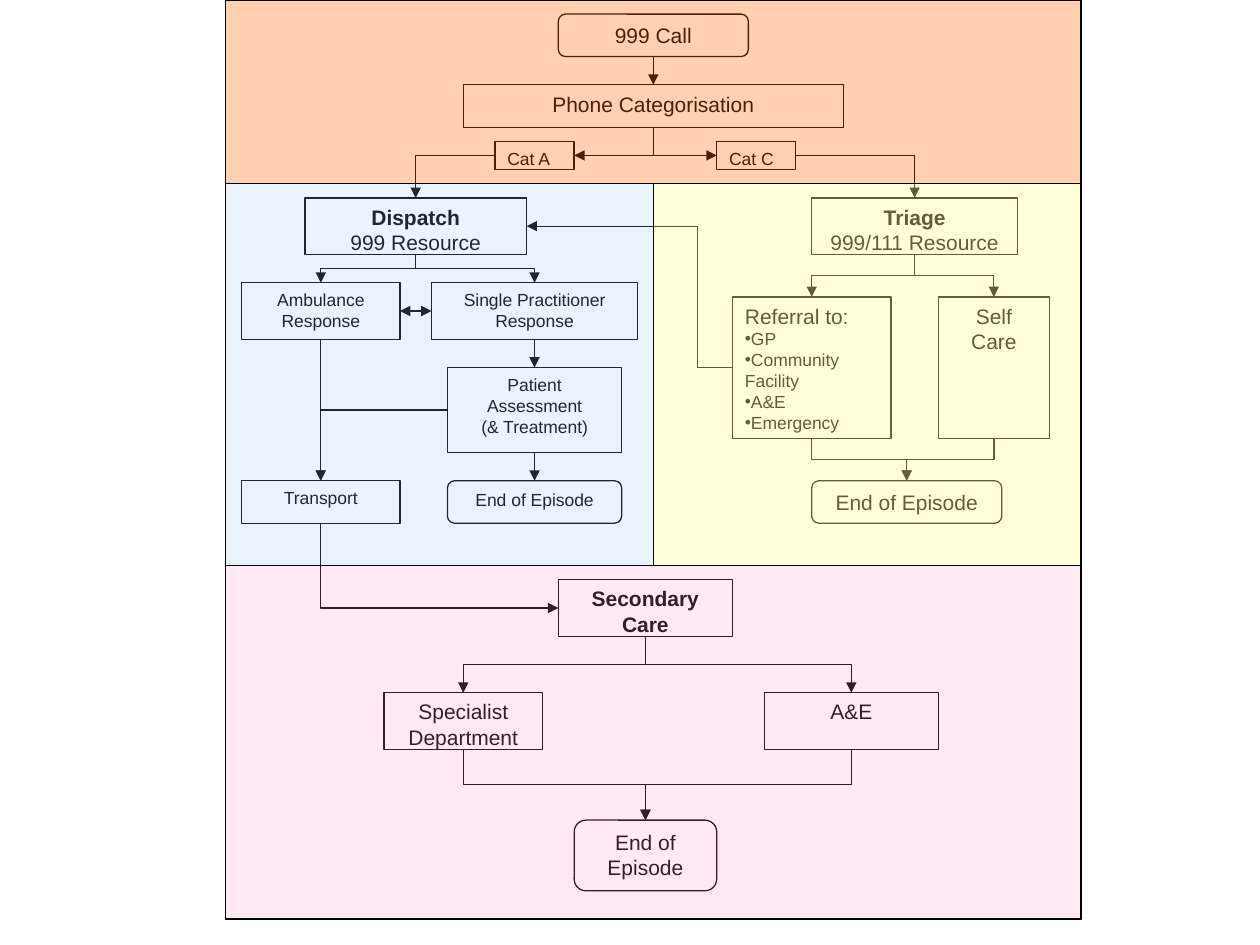
from lxml import etree
from pptx import Presentation
from pptx.dml.color import RGBColor
from pptx.enum.shapes import MSO_CONNECTOR, MSO_SHAPE
from pptx.enum.text import MSO_ANCHOR, PP_ALIGN
from pptx.oxml.ns import qn
from pptx.util import Pt

PROCESS = MSO_SHAPE.FLOWCHART_PROCESS
ALTERNATE = MSO_SHAPE.FLOWCHART_ALTERNATE_PROCESS
ROUNDED = MSO_SHAPE.ROUNDED_RECTANGLE
STRAIGHT, ELBOW = MSO_CONNECTOR.STRAIGHT, MSO_CONNECTOR.ELBOW
TOP = MSO_ANCHOR.TOP
CENTER, LEFT = PP_ALIGN.CENTER, PP_ALIGN.LEFT
TOP_SIDE, LEFT_SIDE, BOTTOM_SIDE, RIGHT_SIDE = range(4)
CHART_LEFT, COLUMN, ROW = 129, 9.05, 8.08
BLACK, WHITE = "000000", "FFFFFF"
INTAKE = (0, 0, 54, 13)
DISPATCH = (0, 13, 27, 27)
TRIAGE = (27, 13, 27, 27)
SECONDARY = (0, 40, 54, 25)


def color(value):
    """Turn a hex string into a colour."""
    return RGBColor.from_string(value)


def outline(line):
    """Give a line the thin black stroke of the chart."""
    line.color.rgb = color(BLACK)
    line.width = Pt(0.75)


def add_block(slide, region, cell, kind=PROCESS, fill=None):
    """Add an outlined shape at a grid cell of a region."""
    column, row, columns, rows = cell
    block = slide.shapes.add_shape(
        kind,
        Pt(CHART_LEFT + (region[0] + column) * COLUMN),
        Pt((region[1] + row) * ROW),
        Pt(columns * COLUMN),
        Pt(rows * ROW),
    )
    block.shadow.inherit = False
    outline(block.line)
    if fill:
        block.fill.solid()
        block.fill.fore_color.rgb = color(fill)
    else:
        block.fill.background()
    return block


def add_step(slide, region, cell, lines, size=12, bold=False, kind=PROCESS, align=CENTER):
    """Add a step whose lines are strings or (text, format) pairs."""
    step = add_block(slide, region, cell, kind, WHITE)
    frame = step.text_frame
    frame.word_wrap = True
    frame.vertical_anchor = TOP
    for index, line in enumerate(lines):
        text, changes = (line, {}) if isinstance(line, str) else line
        paragraph = frame.add_paragraph() if index else frame.paragraphs[0]
        paragraph.alignment = align
        if changes.get("bullet"):
            properties = paragraph._p.get_or_add_pPr()
            etree.SubElement(properties, qn("a:buFont")).set("typeface", "Arial")
            etree.SubElement(properties, qn("a:buChar")).set("char", "•")
        run = paragraph.add_run()
        run.text = text
        values = {"name": "Arial", "size": Pt(changes.get("size", size)),
                  "bold": changes.get("bold", bold)}
        for name, value in values.items():
            setattr(run.font, name, value)
        run.font.color.rgb = color(BLACK)
    return step


def side_point(step, side):
    """Return the middle of a side of a step."""
    across = {LEFT_SIDE: 0, RIGHT_SIDE: step.width}.get(side, step.width // 2)
    down = {TOP_SIDE: 0, BOTTOM_SIDE: step.height}.get(side, step.height // 2)
    return step.left + across, step.top + down


def finish_link(link, heads=("tailEnd",)):
    """Style a connector and add its arrowheads."""
    outline(link.line)
    stroke = link.line._get_or_add_ln()
    for head in heads:
        etree.SubElement(stroke, qn(f"a:{head}")).set("type", "triangle")
    etree.SubElement(link._element.spPr, qn("a:effectLst"))


def link_straight(slide, start, start_side, end, end_side, heads=("tailEnd",)):
    """Join two steps with a straight arrow."""
    link = slide.shapes.add_connector(
        STRAIGHT, *side_point(start, start_side), *side_point(end, end_side))
    link.begin_connect(start, start_side)
    link.end_connect(end, end_side)
    finish_link(link, heads)


def link_bent(slide, start, start_side, end, end_side, bend=None):
    """Join two steps with an arrow of one corner, or two when sides are parallel."""
    x1, y1 = side_point(start, start_side)
    x2, y2 = side_point(end, end_side)
    vertical_start = start_side == BOTTOM_SIDE
    if vertical_start:
        rightward = x2 > x1
        center_x, center_y = (x1 + x2) // 2, (y1 + y2) // 2
        half_width, half_height = (y2 - y1) // 2, abs(x2 - x1) // 2
        reach = half_width if rightward else -half_width
        x1, x2 = center_x + reach, center_x - reach
        y1, y2 = center_y - half_height, center_y + half_height
    link = slide.shapes.add_connector(ELBOW, x1, y1, x2, y2)
    geometry = link._element.spPr.find(qn("a:prstGeom"))
    if vertical_start:
        degrees = 270 if rightward else 90
        link._element.spPr.find(qn("a:xfrm")).set("rot", str(degrees * 60000))
    if start_side % 2 != end_side % 2:
        geometry.set("prst", "bentConnector2")
    elif bend is not None:
        guide = etree.SubElement(geometry.find(qn("a:avLst")), qn("a:gd"))
        guide.set("name", "adj1")
        guide.set("fmla", f"val {round(bend * 100000)}")
    finish_link(link)


def add_intake(slide, region):
    """Place the call and its categories."""
    call = add_step(slide, region, (21, 1, 12, 3), ["999 Call"], kind=ALTERNATE)
    categorisation = add_step(slide, region, (15, 6, 24, 3), ["Phone Categorisation"])
    cat_a = add_step(slide, region, (17, 10, 5, 2), ["Cat A"], 10, align=LEFT)
    cat_c = add_step(slide, region, (31, 10, 5, 2), ["Cat C"], 10, align=LEFT)
    link_straight(slide, call, BOTTOM_SIDE, categorisation, TOP_SIDE)
    link_bent(slide, categorisation, BOTTOM_SIDE, cat_a, RIGHT_SIDE)
    link_bent(slide, categorisation, BOTTOM_SIDE, cat_c, LEFT_SIDE)
    return cat_a, cat_c


def add_dispatch(slide, region):
    """Place the ambulance and practitioner responses."""
    dispatch = add_step(slide, region, (5, 1, 14, 4),
                        [("Dispatch", {"bold": True}), "999 Resource"])
    ambulance = add_step(slide, region, (1, 7, 10, 4), ["Ambulance Response"], 10)
    practitioner = add_step(slide, region, (13, 7, 13, 4),
                            ["Single Practitioner Response"], 10)
    assessment = add_step(slide, region, (14, 13, 11, 6),
                          ["Patient Assessment", "(& Treatment)"], 10)
    transport = add_step(slide, region, (1, 21, 10, 3), ["Transport"], 10)
    episode_end = add_step(slide, region, (14, 21, 11, 3), ["End of Episode"], 10,
                           kind=ROUNDED)
    for response in (ambulance, practitioner):
        link_bent(slide, dispatch, BOTTOM_SIDE, response, TOP_SIDE)
    for start, end in ((ambulance, transport), (practitioner, assessment),
                       (assessment, episode_end)):
        link_straight(slide, start, BOTTOM_SIDE, end, TOP_SIDE)
    link_straight(slide, ambulance, RIGHT_SIDE, practitioner, LEFT_SIDE,
                  ("headEnd", "tailEnd"))
    link_bent(slide, assessment, LEFT_SIDE, transport, TOP_SIDE)
    return dispatch, transport


def add_split_and_merge(slide, source, branches, episode_end):
    """Link a source to its branches and the branches to the end."""
    for branch in branches:
        link_bent(slide, source, BOTTOM_SIDE, branch, TOP_SIDE)
        link_bent(slide, branch, BOTTOM_SIDE, episode_end, TOP_SIDE)


def add_triage(slide, region):
    """Place the referral and self care routes."""
    triage = add_step(slide, region, (10, 1, 13, 4),
                      [("Triage", {"bold": True}), "999/111 Resource"])
    places = ("GP", "Community Facility", "A&E", "Emergency")
    bullets = [(place, {"size": 10, "bullet": True}) for place in places]
    referral = add_step(slide, region, (5, 8, 10, 10), ["Referral to:", *bullets],
                        align=LEFT)
    self_care = add_step(slide, region, (18, 8, 7, 10), ["Self Care"])
    episode_end = add_step(slide, region, (10, 21, 12, 3), ["End of Episode"],
                           kind=ROUNDED)
    add_split_and_merge(slide, triage, (referral, self_care), episode_end)
    return triage, referral


def add_secondary(slide, region):
    """Place the hospital departments."""
    secondary = add_step(slide, region, (21, 1, 11, 4), ["Secondary Care"], bold=True)
    specialist = add_step(slide, region, (10, 9, 10, 4), ["Specialist Department"])
    emergency = add_step(slide, region, (34, 9, 11, 4), ["A&E"])
    episode_end = add_step(slide, region, (22, 18, 9, 5), ["End of Episode"],
                           kind=ROUNDED)
    add_split_and_merge(slide, secondary, (specialist, emergency), episode_end)
    return secondary


def add_tint(slide, region, fill, opacity):
    """Cover a region with a translucent tint."""
    tint = add_block(slide, region, (0, 0, *region[2:]), fill=fill)
    shade = tint._element.spPr.find(qn("a:solidFill"))[0]
    etree.SubElement(shade, qn("a:alpha")).set("val", str(opacity * 1000))


def main():
    """Build the emergency call flow chart."""
    deck = Presentation()
    deck.slide_width, deck.slide_height = Pt(720), Pt(540)
    slide = deck.slides.add_slide(deck.slide_layouts[6])
    add_block(slide, (0, 0), (0, 0, 54, 65))
    cat_a, cat_c = add_intake(slide, INTAKE)
    dispatch, transport = add_dispatch(slide, DISPATCH)
    triage, referral = add_triage(slide, TRIAGE)
    secondary = add_secondary(slide, SECONDARY)
    link_bent(slide, cat_a, LEFT_SIDE, dispatch, TOP_SIDE)
    link_bent(slide, cat_c, RIGHT_SIDE, triage, TOP_SIDE)
    link_bent(slide, transport, BOTTOM_SIDE, secondary, LEFT_SIDE)
    link_bent(slide, referral, LEFT_SIDE, dispatch, RIGHT_SIDE, 0.17)
    for region, fill, opacity in ((SECONDARY, "FF99CC", 20), (TRIAGE, "FFFF99", 37),
                                  (INTAKE, "FF6600", 30), (DISPATCH, "99CCFF", 20)):
        add_tint(slide, region, fill, opacity)
    deck.save("out.pptx")


if __name__ == "__main__":
    main()
